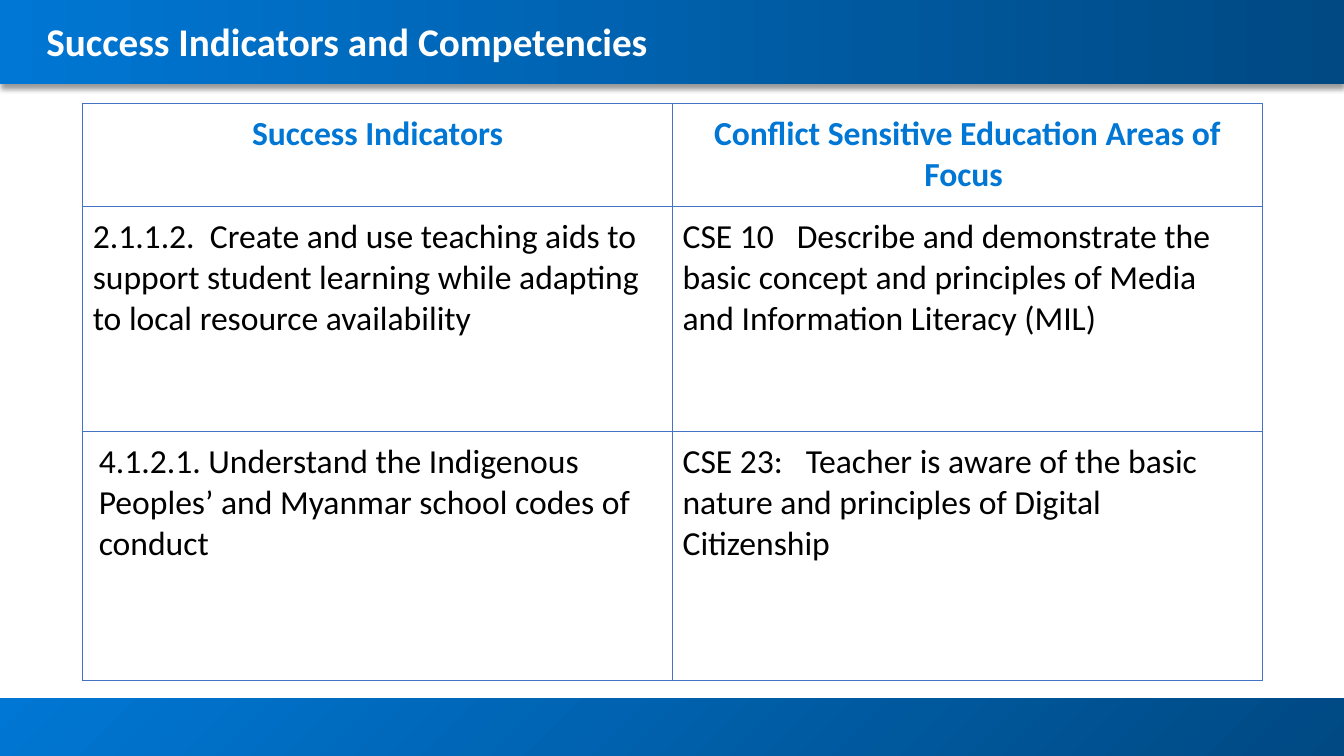
"""Builds the slide of success indicators and competencies."""
from lxml import etree
from pptx import Presentation
from pptx import util as u
from pptx.dml.color import RGBColor
from pptx.enum import shapes, text
from pptx.oxml import parse_xml
from pptx.oxml.ns import nsdecls, qn

TITLE = "Success Indicators and Competencies"
ROWS = [
    ("Success Indicators", "Conflict Sensitive Education Areas of Focus "),
    ("2.1.1.2.  Create and use teaching aids to support student learning "
     "while adapting to local resource availability ",
     "CSE 10   Describe and demonstrate the basic concept and principles of "
     "Media and Information Literacy (MIL)"),
    ("4.1.2.1. Understand the Indigenous Peoples’ and Myanmar school codes of conduct",
     "CSE 23:   Teacher is aware of the basic nature and principles of "
     "Digital Citizenship"),
]
INDENTS = {(2, 0): 0.06}
ROW_HEIGHTS = [1.02, 2.23, 2.47]
COL_WIDTH = 5.85
SLIDE_W, SLIDE_H = 13.33, 7.5
HEADER_H, FOOTER_H = 0.83, 0.57
THEME = dict(font="Calibri", title=28, body=24, white="FFFFFF", black="000000",
             blue="0077D4", navy="004983", border="4472C4")


def write(tf, content, size, color, bold=False, align=None, spacing=None, indent=0):
    p = tf.paragraphs[0]
    if indent:
        pPr = p._p.get_or_add_pPr()
        pPr.set("marL", str(u.Inches(indent)))
        pPr.set("indent", "0")
    if align is not None:
        p.alignment = align
    if spacing:
        p.line_spacing = spacing
    r = p.add_run()
    r.text = content
    r.font.name = THEME["font"]
    r.font.size = u.Pt(size)
    r.font.bold = bold
    r.font.color.rgb = RGBColor.from_string(color)


def add_bar(s, top, height, colors, angle):
    sp = s.shapes.add_shape(shapes.MSO_SHAPE.RECTANGLE, 0, u.Inches(top),
                            u.Inches(SLIDE_W), u.Inches(height))
    sp.shadow.inherit = False
    sp.line.fill.background()
    sp.fill.gradient()
    sp.fill.gradient_angle = angle
    for stop, color, position in zip(sp.fill.gradient_stops, colors, (0, 1)):
        stop.color.rgb = RGBColor.from_string(color)
        stop.position = position
    return sp


def add_shadow(sp):
    effects = sp._element.spPr.find(qn("a:effectLst"))
    effects.append(parse_xml(
        f'<a:outerShdw {nsdecls("a")} blurRad="{u.Pt(4)}" dist="{u.Pt(3)}" '
        'dir="5400000" algn="t" rotWithShape="0"><a:srgbClr val="000000">'
        '<a:alpha val="40000"/></a:srgbClr></a:outerShdw>'))


def add_borders(cell):
    tcPr = cell._tc.get_or_add_tcPr()
    for i, side in enumerate(("lnL", "lnR", "lnT", "lnB")):
        ln = etree.Element(qn(f"a:{side}"), w=str(u.Pt(0.75)))
        fill = etree.SubElement(ln, qn("a:solidFill"))
        etree.SubElement(fill, qn("a:srgbClr"), val=THEME["border"])
        tcPr.insert(i, ln)


def add_grid(s):
    frame = s.shapes.add_table(len(ROWS), 2, u.Inches(0.82), u.Inches(1.03),
                               u.Inches(2 * COL_WIDTH), u.Inches(sum(ROW_HEIGHTS)))
    table = frame.table
    for col in table.columns:
        col.width = u.Inches(COL_WIDTH)
    for i, (row, height) in enumerate(zip(ROWS, ROW_HEIGHTS)):
        table.rows[i].height = u.Inches(height)
        head = i == 0
        for j, content in enumerate(row):
            cell = table.cell(i, j)
            cell.margin_left = cell.margin_right = u.Inches(0.1)
            cell.margin_top = cell.margin_bottom = u.Inches(0.1)
            cell.fill.background()
            add_borders(cell)
            write(cell.text_frame, content, THEME["body"],
                  THEME["blue" if head else "black"], bold=head,
                  align=text.PP_ALIGN.CENTER if head else text.PP_ALIGN.LEFT,
                  indent=INDENTS.get((i, j), 0))


def main():
    prs = Presentation()
    prs.slide_width, prs.slide_height = u.Inches(SLIDE_W), u.Inches(SLIDE_H)
    s = prs.slides.add_slide(prs.slide_layouts[6])
    colors = (THEME["blue"], THEME["navy"])
    add_bar(s, SLIDE_H - FOOTER_H, FOOTER_H, colors[::-1], 135)
    add_shadow(add_bar(s, 0, HEADER_H, colors, 0))

    title = s.shapes.add_textbox(u.Inches(0.46), u.Inches(0.17),
                                 u.Inches(12.41), u.Inches(0.5))
    tf = title.text_frame
    tf.word_wrap = True
    tf.vertical_anchor = text.MSO_ANCHOR.MIDDLE
    tf.margin_left = tf.margin_right = tf.margin_top = tf.margin_bottom = 0
    write(tf, TITLE, THEME["title"], THEME["white"], bold=True, spacing=0.99)
    add_grid(s)
    prs.save("out.pptx")


if __name__ == "__main__":
    main()
